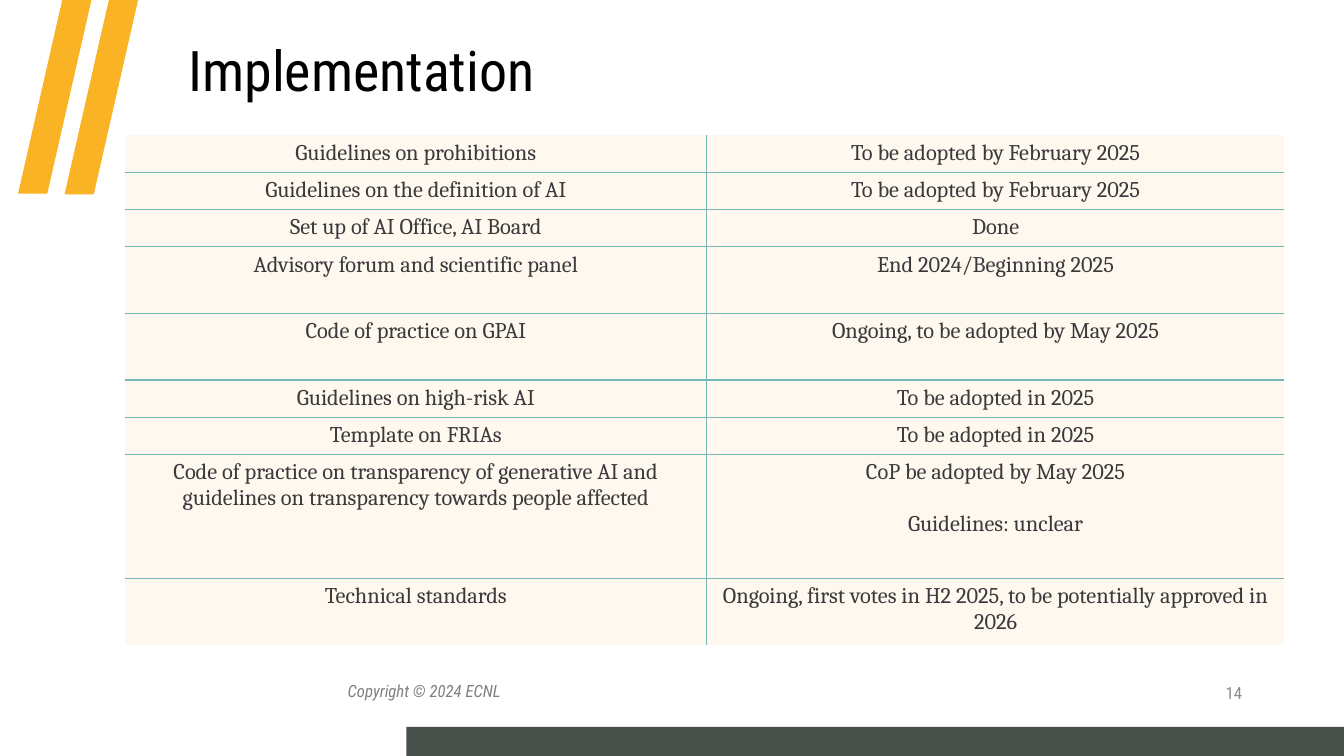
from lxml import etree
from pptx import Presentation
from pptx.dml.color import RGBColor
from pptx.enum.shapes import MSO_SHAPE
from pptx.enum.text import MSO_ANCHOR as ANCHOR, PP_ALIGN as ALIGN
from pptx.oxml.ns import qn
from pptx.util import Inches, Pt

HEAD_FONT, BODY_FONT = "Roboto Condensed", "Cambria"
YELLOW, DARK, TEAL, CREAM = "F9B324", "494F4B", "74B9B6", "FEF8EE"

COL_WIDTHS = [5.77, 5.73]
# Row height, task, status paragraphs
ROWS = [
    (0.37, "Guidelines on prohibitions", "To be adopted by February 2025"),
    (0.37, "Guidelines on the definition of AI", "To be adopted by February 2025"),
    (0.37, "Set up of AI Office, AI Board", "Done"),
    (0.66, "Advisory forum and scientific panel", "End 2024/Beginning 2025"),
    (0.66, "Code of practice on GPAI", "Ongoing, to be adopted by May 2025"),
    (0.37, "Guidelines on high-risk AI", "To be adopted in 2025"),
    (0.37, "Template on FRIAs", "To be adopted in 2025"),
    (1.23, "Code of practice on transparency of generative AI and "
           "guidelines on transparency towards people affected",
     "CoP be adopted by May 2025\nGuidelines: unclear"),
    (0.66, "Technical standards",
     "Ongoing, first votes in H2 2025, to be potentially approved in 2026"),
]


def rgb(color):
    return RGBColor.from_string(color)


def paint(sp, color):
    sp.shadow.inherit = False
    sp.fill.solid()
    sp.fill.fore_color.rgb = rgb(color)
    sp.line.fill.background()


def style_text(p, font, size, color, align=ALIGN.LEFT, italic=False):
    p.alignment = align
    for r in p.runs:
        r.font.name = font
        r.font.size = Pt(size)
        r.font.color.rgb = rgb(color)
        r.font.italic = italic


def add_text(slide, box, text, size, color, anchor=ANCHOR.TOP, **style):
    tf = slide.shapes.add_textbox(*map(Inches, box)).text_frame
    tf.word_wrap = True
    tf.vertical_anchor = anchor
    tf.text = text
    p = tf.paragraphs[0]
    style_text(p, HEAD_FONT, size, color, **style)
    return p


def add_stripe(slide, left, bottom):
    """Slanted stripe that rises 1.93 inches from its lower left corner."""
    offsets = [(0.44, -1.93), (0.73, -1.93), (0.29, 0)]
    builder = slide.shapes.build_freeform(Inches(left), Inches(bottom))
    builder.add_line_segments(
        [(Inches(left + dx), Inches(bottom + dy)) for dx, dy in offsets])
    paint(builder.convert_to_shape(), YELLOW)


def set_borders(cell, inner_sides):
    """Teal lines on the inner sides, none on the outer ones."""
    tc_pr = cell._tc.get_or_add_tcPr()
    for i, side in enumerate("LRTB"):
        ln = etree.Element(qn(f"a:ln{side}"), w=str(Pt(1)))
        if side in inner_sides:
            fill = etree.SubElement(ln, qn("a:solidFill"))
            etree.SubElement(fill, qn("a:srgbClr"), val=TEAL)
        else:
            etree.SubElement(ln, qn("a:noFill"))
        tc_pr.insert(i, ln)


def fill_cell(cell, text):
    cell.fill.solid()
    cell.fill.fore_color.rgb = rgb(CREAM)
    cell.text_frame.text = text
    for i, p in enumerate(cell.text_frame.paragraphs):
        style_text(p, BODY_FONT, 16, "3A3A3D", ALIGN.CENTER)
        if i:
            p.space_before = Pt(18.6)


def add_timeline_table(slide, left, top):
    height = sum(row[0] for row in ROWS)
    table = slide.shapes.add_table(
        len(ROWS), len(COL_WIDTHS), Inches(left), Inches(top),
        Inches(sum(COL_WIDTHS)), Inches(height)).table
    table.first_row = table.horz_banding = False
    for col, width in zip(table.columns, COL_WIDTHS):
        col.width = Inches(width)
    for i, (row_height, *texts) in enumerate(ROWS):
        table.rows[i].height = Inches(row_height)
        for j, text in enumerate(texts):
            cell = table.cell(i, j)
            fill_cell(cell, text)
            sides = "L" if j else "R"
            sides += "T" if i else ""
            sides += "B" if i < len(ROWS) - 1 else ""
            set_borders(cell, sides)


def main():
    prs = Presentation()
    prs.slide_width, prs.slide_height = Inches(13.33), Inches(7.5)
    slide = prs.slides.add_slide(prs.slide_layouts[6])

    # Corner stripes and bottom bar
    add_stripe(slide, 0.64, 1.93)
    add_stripe(slide, 0.18, 1.92)
    bar = slide.shapes.add_shape(
        MSO_SHAPE.RECTANGLE, *map(Inches, (4.03, 7.21, 9.3, 0.29)))
    paint(bar, DARK)

    # Footer
    add_text(slide, (3.35, 6.7, 1.92, 0.3), "Copyright © 2024 ECNL", 12,
             "808080", italic=True)
    add_text(slide, (11.96, 6.64, 0.46, 0.46), "14", 12, "8C8C8C",
             ANCHOR.MIDDLE, align=ALIGN.RIGHT)

    # Title and table
    title = add_text(slide, (1.77, -0.21, 11.5, 1.29), "Implementation", 40,
                     "000000", ANCHOR.BOTTOM)
    title.line_spacing = 0.9
    add_timeline_table(slide, 1.24, 1.34)

    prs.save("out.pptx")


if __name__ == "__main__":
    main()
